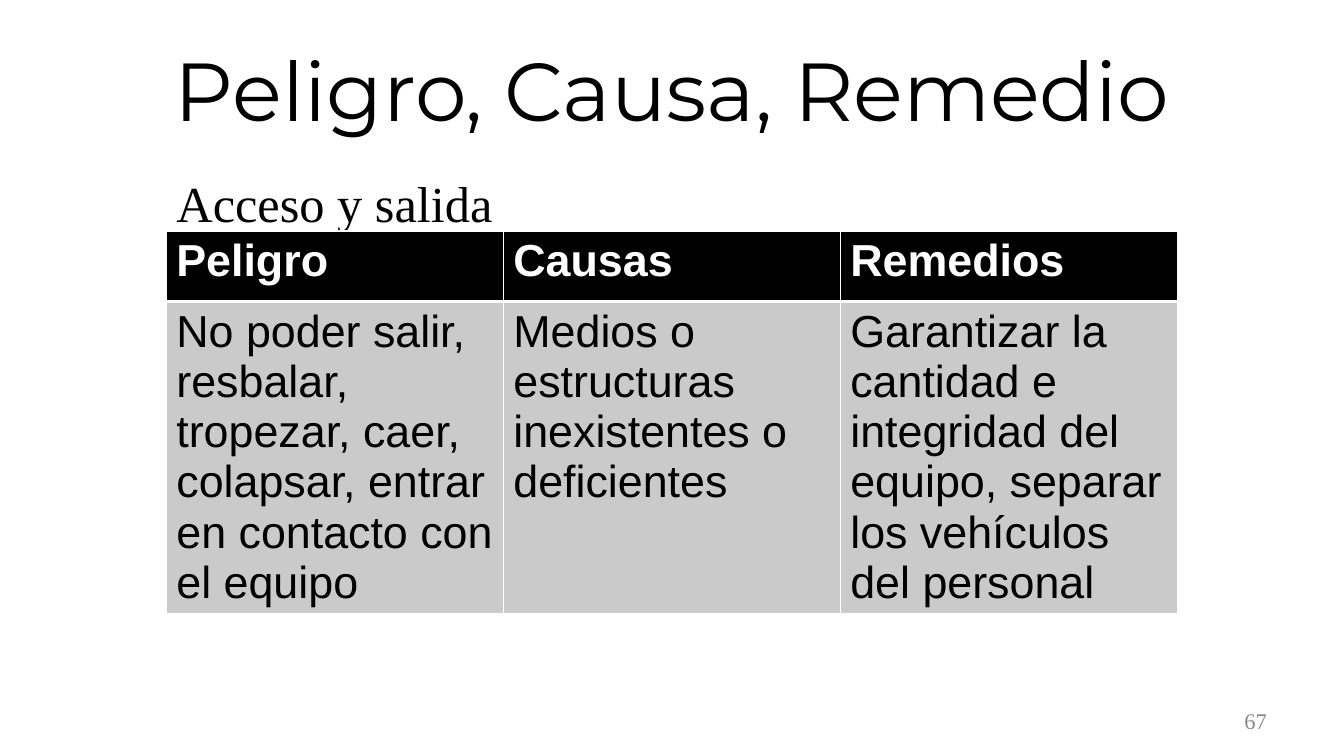
from dataclasses import dataclass

from lxml import etree
from pptx import Presentation
from pptx.dml.color import RGBColor
from pptx.enum.text import MSO_ANCHOR, MSO_AUTO_SIZE, PP_ALIGN
from pptx.oxml.ns import qn
from pptx.shapes.base import BaseShape
from pptx.table import _Cell
from pptx.text.text import TextFrame
from pptx.util import Pt

LEFT, CENTER, RIGHT = PP_ALIGN.LEFT, PP_ALIGN.CENTER, PP_ALIGN.RIGHT
TOP, MIDDLE = MSO_ANCHOR.TOP, MSO_ANCHOR.MIDDLE
NO_AUTOFIT = MSO_AUTO_SIZE.NONE

COLORS = {
    "black": "000000",
    "white": "FFFFFF",
    "body_fill": "CACACA",
    "number": "888888",
}


@dataclass
class TextStyle:
    font: str
    size: float
    color: str
    bold: bool = False
    align: PP_ALIGN = LEFT
    anchor: MSO_ANCHOR = TOP


@dataclass
class TableRow:
    height: float
    fill: str
    style: TextStyle
    top_border: float
    bottom_border: float
    texts: tuple[str, ...]


TITLE_STYLE = TextStyle("Montserrat", 58.7, "black", align=CENTER, anchor=MIDDLE)
SUBTITLE_STYLE = TextStyle("Times New Roman", 36, "black")
NUMBER_STYLE = TextStyle("Times New Roman", 16, "number", align=RIGHT, anchor=MIDDLE)
HEADER_STYLE = TextStyle("Arial", 32, "white", bold=True)
BODY_STYLE = TextStyle("Arial", 32, "black")

TABLE_LEFT, TABLE_TOP, COLUMN_WIDTH = 118.8, 165, 240.7
TABLE_ROWS = (
    TableRow(50.4, "black", HEADER_STYLE, 1, 3, ("Peligro", "Causas", "Remedios")),
    TableRow(221, "body_fill", BODY_STYLE, 3, 1, (
        "No poder salir, resbalar, tropezar, caer, colapsar, entrar en contacto con el equipo",
        "Medios o estructuras inexistentes o deficientes",
        "Garantizar la cantidad e integridad del equipo, separar los vehículos del personal",
    )),
)


def rgb(name: str) -> RGBColor:
    return RGBColor.from_string(COLORS[name])


def write_text(frame: TextFrame, text: str, style: TextStyle) -> None:
    frame.text = text
    para = frame.paragraphs[0]
    para.alignment = style.align
    para.space_before = Pt(0)
    for span in para.runs:
        span.font.name = style.font
        span.font.size = Pt(style.size)
        span.font.bold = style.bold
        span.font.color.rgb = rgb(style.color)


def fill_box(box: BaseShape, text: str, style: TextStyle) -> None:
    frame = box.text_frame
    frame.word_wrap = True
    frame.auto_size = NO_AUTOFIT
    frame.vertical_anchor = style.anchor
    write_text(frame, text, style)


def place(box: BaseShape, left: float, top: float, width: float, height: float) -> None:
    box.left, box.top, box.width, box.height = Pt(left), Pt(top), Pt(width), Pt(height)


def remove_bullet(frame: TextFrame) -> None:
    properties = frame.paragraphs[0]._p.get_or_add_pPr()
    properties.set("marL", "0")
    properties.set("indent", "0")
    etree.SubElement(properties, qn("a:buNone"))


def add_borders(cell: _Cell, top: float, bottom: float) -> None:
    """Draw white borders; must run before the cell fill is set."""
    properties = cell._tc.get_or_add_tcPr()
    for side, width in (("L", 1), ("R", 1), ("T", top), ("B", bottom)):
        line = etree.SubElement(properties, qn(f"a:ln{side}"), w=str(Pt(width)))
        solid = etree.SubElement(line, qn("a:solidFill"))
        etree.SubElement(solid, qn("a:srgbClr"), val=COLORS["white"])


def add_hazard_table(page) -> None:
    column_count = len(TABLE_ROWS[0].texts)
    table = page.shapes.add_table(
        len(TABLE_ROWS), column_count, Pt(TABLE_LEFT), Pt(TABLE_TOP),
        Pt(COLUMN_WIDTH * column_count), Pt(sum(row.height for row in TABLE_ROWS)),
    ).table
    for column in table.columns:
        column.width = Pt(COLUMN_WIDTH)
    for row_index, row in enumerate(TABLE_ROWS):
        table.rows[row_index].height = Pt(row.height)
        for column_index, text in enumerate(row.texts):
            cell = table.cell(row_index, column_index)
            add_borders(cell, row.top_border, row.bottom_border)
            cell.fill.solid()
            cell.fill.fore_color.rgb = rgb(row.fill)
            write_text(cell.text_frame, text, row.style)


def main() -> None:
    deck = Presentation()
    deck.slide_width, deck.slide_height = Pt(960), Pt(540)
    page = deck.slides.add_slide(deck.slide_layouts[1])

    title = page.shapes.title
    place(title, 66, 10.8, 828, 104.4)
    fill_box(title, "Peligro, Causa, Remedio", TITLE_STYLE)

    subtitle = page.placeholders[1]
    place(subtitle, TABLE_LEFT, 114.5, 519, 50.4)
    fill_box(subtitle, "Acceso y salida", SUBTITLE_STYLE)
    remove_bullet(subtitle.text_frame)
    subtitle.text_frame.margin_top = Pt(8.6)
    subtitle.text_frame.margin_bottom = Pt(0)

    add_hazard_table(page)

    number = page.shapes.add_textbox(Pt(688), Pt(500.4), Pt(224), Pt(28.8))
    fill_box(number, "67", NUMBER_STYLE)

    deck.save("out.pptx")


if __name__ == "__main__":
    main()
